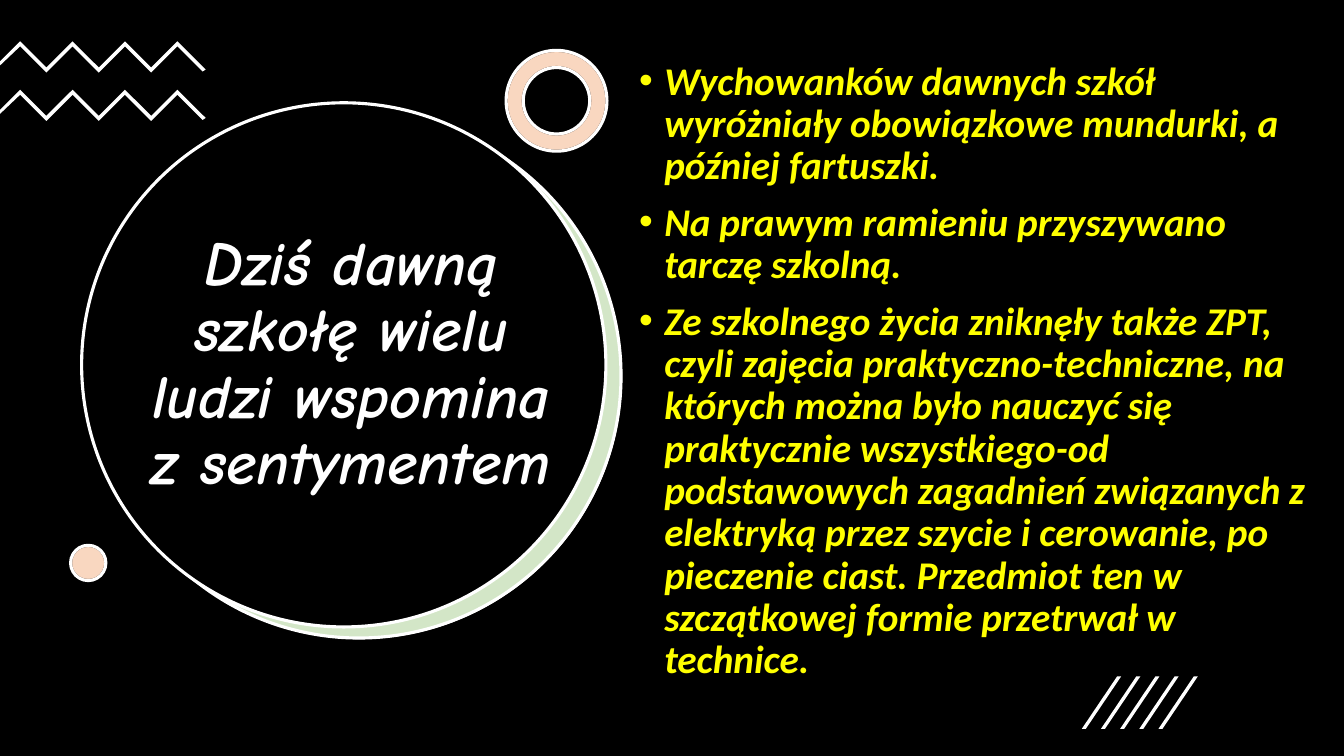
"""Build a slide of school memories with a circled title and a bullet list."""
from dataclasses import dataclass
from typing import Optional

from lxml.etree import SubElement
from pptx import Presentation
from pptx.dml.color import RGBColor
from pptx.enum.shapes import MSO_SHAPE
from pptx.enum.text import MSO_ANCHOR, PP_ALIGN
from pptx.oxml.ns import qn
from pptx.util import Inches, Pt

WHITE, BLACK, YELLOW = "FFFFFF", "000000", "FFFF00"
GREEN, ORANGE = "70AD47", "ED7D31"

Point = tuple[float, float]


@dataclass
class Form:
    """Describe a preset shape."""
    kind: MSO_SHAPE
    left: float
    top: float
    width: float
    height: float
    fill: str
    line: Optional[str] = None
    alpha: int = 100
    ring: Optional[float] = None


@dataclass
class Block:
    """Describe a box of text."""
    left: float
    top: float
    width: float
    height: float
    lines: list[str]
    frame: dict
    para: dict
    font: dict
    color: str
    bullet: bool = False


def rgb(code: str) -> RGBColor:
    """Turn a hex string into a colour."""
    return RGBColor.from_string(code)


def apply(item, values: dict) -> None:
    """Set each named value on an item."""
    for name, value in values.items():
        setattr(item, name, value)


def paint(shape, fill: str, line: Optional[str] = None, alpha: int = 100) -> None:
    """Give a shape its fill and line."""
    shape.shadow.inherit = False
    shape.fill.solid()
    shape.fill.fore_color.rgb = rgb(fill)
    if alpha < 100:
        tone = shape.fill._xPr.find(".//" + qn("a:srgbClr"))
        SubElement(tone, qn("a:alpha"), val=str(alpha * 1000))
    if line:
        shape.line.color.rgb = rgb(line)
        shape.line.width = Pt(2.25)
    else:
        shape.line.fill.background()


def draw_form(slide, form: Form) -> None:
    """Draw a preset shape."""
    area = map(Inches, (form.left, form.top, form.width, form.height))
    shape = slide.shapes.add_shape(form.kind, *area)
    if form.ring is not None:
        shape.adjustments[0] = form.ring
    paint(shape, form.fill, form.line, form.alpha)


def draw_path(slide, points: list[Point]) -> None:
    """Draw a closed white outline."""
    spots = [(Inches(x), Inches(y)) for x, y in points]
    pen = slide.shapes.build_freeform(*spots[0], scale=1.0)
    pen.add_line_segments(spots[1:], close=True)
    paint(pen.convert_to_shape(), WHITE)


def draw_block(slide, block: Block) -> None:
    """Draw a box of text."""
    area = map(Inches, (block.left, block.top, block.width, block.height))
    frame = slide.shapes.add_textbox(*area).text_frame
    apply(frame, {"word_wrap": True, **block.frame})
    for spot, line in enumerate(block.lines):
        para = frame.add_paragraph() if spot else frame.paragraphs[0]
        apply(para, block.para)
        run = para.add_run()
        run.text = line
        apply(run.font, block.font)
        run.font.color.rgb = rgb(block.color)
        if block.bullet:
            props = para._p.get_or_add_pPr()
            apply_indent = {"marL": Inches(0.25), "indent": Inches(-0.25)}
            for name, value in apply_indent.items():
                props.set(name, str(int(value)))
            SubElement(props, qn("a:buFont"), typeface="Arial")
            SubElement(props, qn("a:buChar"), char="•")


def zigzag(top: float) -> list[Point]:
    """Return the outline of a zigzag band."""
    edge = [(0.2 + 0.26 * i, top + 0.26 * (i % 2)) for i in range(7)]
    under = [(x, y + 0.05) for x, y in reversed(edge)]
    tip = [(2.04, top + 0.28), (2.01, top + 0.3)]
    return edge + tip + under + [(0, top + 0.24), (0, top + 0.2)]


def slash(left: float) -> list[Point]:
    """Return the outline of a slanted stroke."""
    low, high = 7.23, 6.71
    return [(left + 0.04, low), (left, low), (left + 0.35, high), (left + 0.39, high)]


OVAL, DONUT = MSO_SHAPE.OVAL, MSO_SHAPE.DONUT

DISCS = [
    Form(MSO_SHAPE.RECTANGLE, 0, 0, 13.33, 7.5, BLACK),
    Form(OVAL, 0.97, 1.14, 5.2, 5.2, WHITE),
    Form(OVAL, 0.96, 1.13, 5.2, 5.2, GREEN, WHITE, 30),
    Form(OVAL, 0.81, 1.02, 5.2, 5.2, BLACK, WHITE),
]

TITLE = Block(
    1.28, 1.86, 4.41, 3.52,
    ["Dziś dawną szkołę wielu ludzi wspomina z sentymentem"],
    {"vertical_anchor": MSO_ANCHOR.MIDDLE},
    {"alignment": PP_ALIGN.CENTER, "line_spacing": 0.9},
    {"name": "Comic Neue", "size": Pt(44), "bold": True, "italic": True},
    WHITE,
)

DECOR = [
    Form(kind, left, top, size, size, fill, line, alpha, ring)
    for kind, left, top, size, ring in [(DONUT, 5.02, 0.5, 1, 0.17), (OVAL, 0.7, 5.41, 0.35, None)]
    for fill, line, alpha in [(WHITE, BLACK, 100), (ORANGE, WHITE, 30)]
]

BODY = Block(
    6.24, 0.56, 6.96, 6.79,
    [
        "Wychowanków dawnych szkół wyróżniały obowiązkowe mundurki, a później fartuszki.",
        "Na prawym ramieniu przyszywano tarczę szkolną.",
        "Ze szkolnego życia zniknęły także ZPT, czyli zajęcia praktyczno-techniczne, "
        "na których można było nauczyć się praktycznie wszystkiego-od podstawowych "
        "zagadnień związanych z elektryką przez szycie i cerowanie, po pieczenie ciast. "
        "Przedmiot ten w szczątkowej formie przetrwał w technice.",
    ],
    {"vertical_anchor": MSO_ANCHOR.TOP},
    {"line_spacing": 0.9, "space_before": Pt(10)},
    {"name": "Calibri", "size": Pt(28), "bold": True, "italic": True},
    YELLOW,
    True,
)


def main() -> None:
    """Build and save the slide."""
    deck = Presentation()
    apply(deck, {"slide_width": Inches(13.33), "slide_height": Inches(7.5)})
    slide = deck.slides.add_slide(deck.slide_layouts[6])
    for disc in DISCS:
        draw_form(slide, disc)
    draw_block(slide, TITLE)
    for top in (0.41, 0.89):
        draw_path(slide, zigzag(top))
    for form in DECOR:
        draw_form(slide, form)
    draw_block(slide, BODY)
    for i in range(5):
        draw_path(slide, slash(10.73 + 0.19 * i))
    deck.save("out.pptx")


if __name__ == "__main__":
    main()
